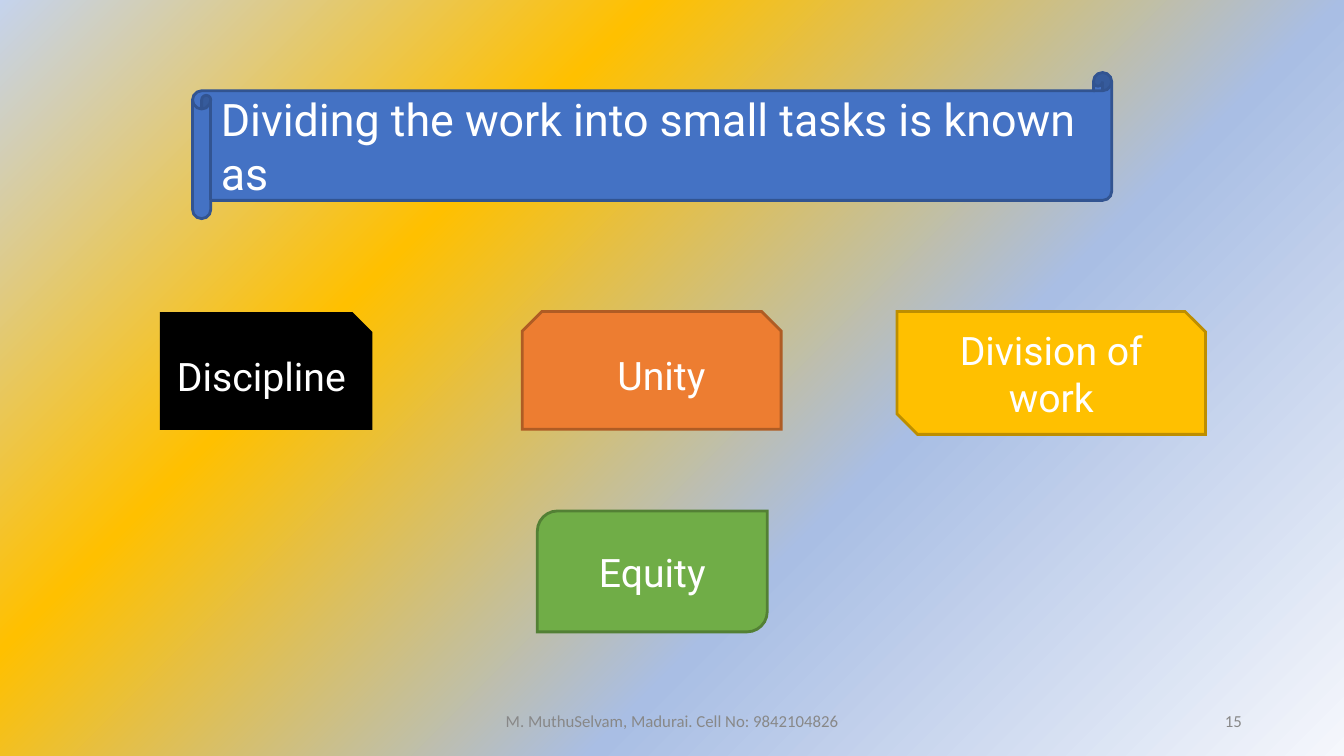
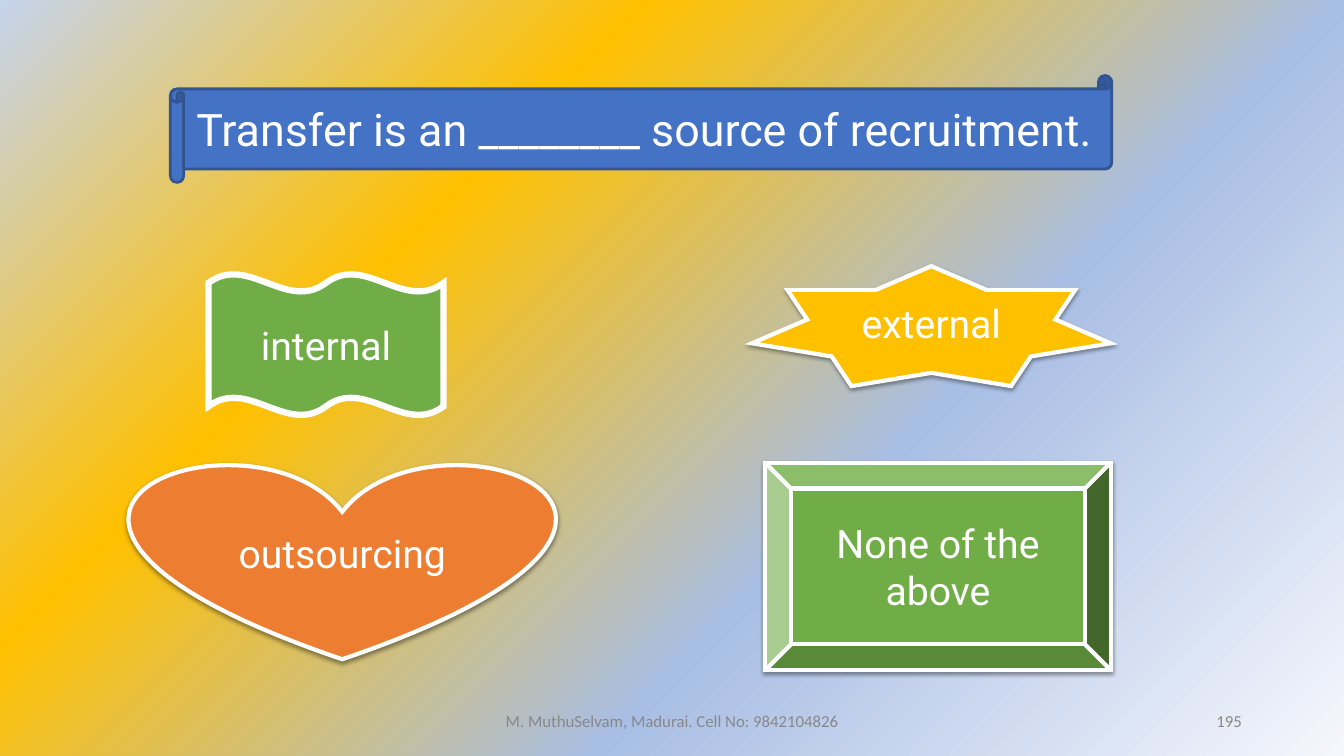
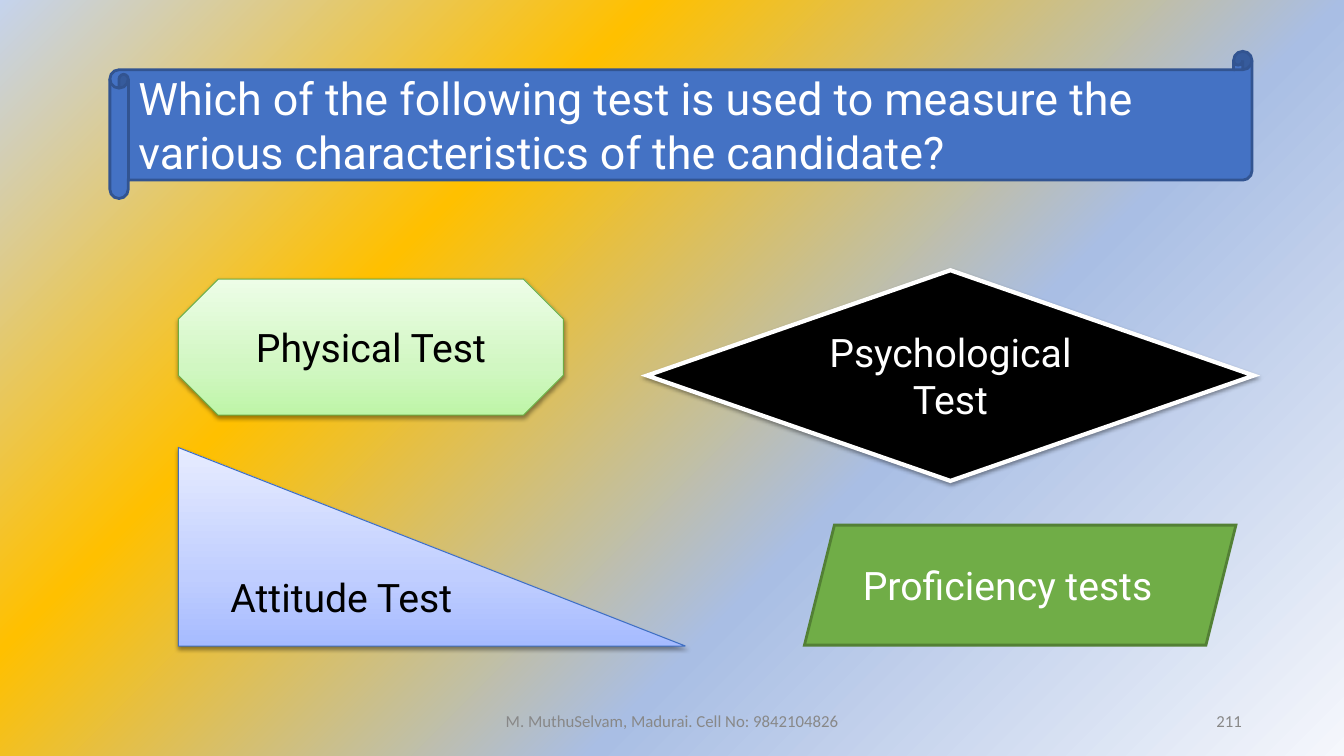
import lxml.etree
import pptx
import pptx.dml.color
import pptx.enum.shapes
import pptx.enum.text
import pptx.oxml.ns
import pptx.util

Pt = pptx.util.Pt
RGB = pptx.dml.color.RGBColor
SHAPE = pptx.enum.shapes.MSO_SHAPE
ALIGN = pptx.enum.text.PP_ALIGN
qn = pptx.oxml.ns.qn

WHITE = RGB(0xFF, 0xFF, 0xFF)
BLACK = RGB(0x00, 0x00, 0x00)
GREY = RGB(0x88, 0x88, 0x88)
BLUE = RGB(0x44, 0x72, 0xC4)
DARK_BLUE = RGB(0x32, 0x54, 0x91)
EDGE_BLUE = RGB(0x3F, 0x6F, 0xC3)
ORANGE = RGB(0xED, 0x7D, 0x31)
DARK_ORANGE = RGB(0xAF, 0x5C, 0x24)
AMBER = RGB(0xFF, 0xC0, 0x00)
DARK_AMBER = RGB(0xBD, 0x8E, 0x00)
GREEN = RGB(0x70, 0xAD, 0x47)
DARK_GREEN = RGB(0x53, 0x80, 0x35)
EDGE_GREEN = RGB(0x6D, 0xAC, 0x43)
PALE_GREENS = [(0, RGB(0xBE, 0xF5, 0xA7)), (35, RGB(0xD1, 0xF7, 0xC2)), (100, RGB(0xED, 0xFD, 0xE7))]
PALE_BLUES = [(0, RGB(0xA6, 0xBB, 0xFF)), (35, RGB(0xC0, 0xCE, 0xFF)), (100, RGB(0xE7, 0xEC, 0xFF))]
BACKGROUND = [(0, RGB(0xF5, 0xF7, 0xFC)), (36, RGB(0xA9, 0xBE, 0xE4)), (69, AMBER), (100, RGB(0xC5, 0xD3, 0xED))]

FOOTER = "M. MuthuSelvam, Madurai. Cell No: 9842104826"
FOOTER_AT = (318.2, 500.4, 324, 28.8)
NUMBER_AT = (678.2, 500.4, 216, 28.8)
INSET = 7.2

SLIDES = [
    dict(
        number="15",
        question="Dividing the work into small tasks is known as",
        at=(137.5, 51.8, 656.6, 104.4),
        answers=[
            dict(text="Discipline", kind=SHAPE.SNIP_1_RECTANGLE, at=(115.2, 223.9, 149.8, 82.1),
                 fill=BLACK, line=BLACK),
            dict(text="Unity", kind=SHAPE.SNIP_2_SAME_RECTANGLE, at=(373, 222.5, 185, 84.2),
                 fill=ORANGE, line=DARK_ORANGE, left_inset=21),
            dict(text="Division of work", kind=SHAPE.SNIP_2_DIAG_RECTANGLE, at=(640.8, 222.5, 220.3, 87.8),
                 fill=AMBER, line=DARK_AMBER),
            dict(text="Equity", kind=SHAPE.ROUND_2_DIAG_RECTANGLE, at=(383.8, 365, 164.2, 86.4),
                 fill=GREEN, line=DARK_GREEN),
        ],
    ),
    dict(
        number="195",
        question="Transfer is an ________ source of recruitment.",
        at=(121.7, 54, 672.5, 76.3),
        align=ALIGN.CENTER,
        answers=[
            dict(text="outsourcing", kind=SHAPE.HEART, at=(92.9, 330.5, 303.1, 140.4),
                 fill=ORANGE, line=WHITE, weight=3, shadow=True),
            dict(text="external", kind=SHAPE.STAR_7_POINT, at=(537.1, 190.1, 256.3, 85.7),
                 fill=AMBER, line=WHITE, weight=3, shadow=True),
            dict(text="None of the above", kind=SHAPE.BEVEL, at=(546.5, 330.5, 247, 148.3),
                 fill=GREEN, line=WHITE, weight=3, shadow=True),
            dict(text="internal", kind=SHAPE.DOUBLE_WAVE, at=(149, 195.8, 167.8, 100.8),
                 fill=GREEN, line=WHITE, weight=4.5),
        ],
    ),
    dict(
        number="211",
        question="Which of the following test is used to measure the various characteristics of the candidate?",
        at=(78.5, 36.7, 815.8, 105.1),
        answers=[
            dict(text="Physical Test", kind=SHAPE.OCTAGON, at=(127.4, 199.4, 275, 97.2),
                 fill=PALE_GREENS, line=EDGE_GREEN, weight=0.75, shadow=True, color=BLACK),
            dict(text="Psychological Test", kind=SHAPE.DIAMOND, at=(462.2, 193, 433.4, 150.5),
                 fill=BLACK, line=WHITE, weight=3, shadow=True),
            dict(text="Attitude Test", kind=SHAPE.RIGHT_TRIANGLE, at=(127.4, 319.7, 362.2, 141.8),
                 fill=PALE_BLUES, line=EDGE_BLUE, weight=0.75, shadow=True, color=BLACK, align=ALIGN.LEFT),
            dict(text="Proficiency tests", kind=SHAPE.PARALLELOGRAM, at=(574.6, 375.1, 308.2, 85.7),
                 fill=GREEN, line=DARK_GREEN, align=ALIGN.LEFT),
        ],
    ),
]


def add_node(parent, tag, **attributes):
    return lxml.etree.SubElement(parent, qn(tag), {name: str(value) for name, value in attributes.items()})


def set_gradient(fill, owner, stops):
    fill.gradient()
    gradient = next(owner.iter(qn("a:gradFill")))
    for child in list(gradient):
        gradient.remove(child)
    stop_list = add_node(gradient, "a:gsLst")
    for position, color in stops:
        add_node(add_node(stop_list, "a:gs", pos=position * 1000), "a:srgbClr", val=color)
    return gradient


def paint_background(master):
    gradient = set_gradient(master.background.fill, master.element, BACKGROUND)
    add_node(add_node(gradient, "a:path", path="circle"), "a:fillToRect", l=100000, t=100000)
    add_node(gradient, "a:tileRect", r=-100000, b=-100000)


def add_shadow(shape):
    effects = shape.element.spPr.find(qn("a:effectLst"))
    outer = add_node(effects, "a:outerShdw", blurRad=Pt(3.15), dist=Pt(1.57), dir=5400000, rotWithShape=0)
    add_node(add_node(outer, "a:srgbClr", val=BLACK), "a:alpha", val=38000)


def write(box, text, size, color, font="Roboto", align=ALIGN.CENTER, left_inset=INSET, vertical_inset=3.6):
    frame = box.text_frame
    frame.word_wrap = True
    frame.auto_size = pptx.enum.text.MSO_AUTO_SIZE.NONE
    frame.vertical_anchor = pptx.enum.text.MSO_ANCHOR.MIDDLE
    frame.margin_left, frame.margin_right = Pt(left_inset), Pt(INSET)
    frame.margin_top = frame.margin_bottom = Pt(vertical_inset)
    para = frame.paragraphs[0]
    para.alignment = align
    span = para.add_run()
    span.text = text
    span.font.size = Pt(size)
    span.font.name = font
    span.font.color.rgb = color


def add_figure(page, kind, at, fill, line, weight=2, shadow=False):
    shape = page.shapes.add_shape(kind, *map(Pt, at))
    shape.shadow.inherit = False
    if isinstance(fill, list):
        add_node(set_gradient(shape.fill, shape.element, fill), "a:lin", ang=16200000, scaled=1)
    else:
        shape.fill.solid()
        shape.fill.fore_color.rgb = fill
    shape.line.color.rgb = line
    shape.line.width = Pt(weight)
    add_node(shape.element.spPr.find(qn("a:ln")), "a:miter", lim=800000)
    if shadow:
        add_shadow(shape)
    return shape


def add_answer(page, text, color=WHITE, align=ALIGN.CENTER, left_inset=INSET, **look):
    write(add_figure(page, **look), text, 28, color, align=align, left_inset=left_inset)


def add_question(page, text, at, align):
    add_figure(page, SHAPE.HORIZONTAL_SCROLL, at, BLUE, DARK_BLUE)
    left, top, width, height = at
    roll = height / 8
    title = page.shapes.title
    title.left, title.top = Pt(left + roll), Pt(top + roll)
    title.width, title.height = Pt(width - 1.5 * roll), Pt(height - 2 * roll)
    write(title, text, 32, WHITE, align=align, vertical_inset=0)
    page.shapes.element.append(title.element)


def add_footer(page, text, at, align):
    write(page.shapes.add_textbox(*map(Pt, at)), text, 12, GREY, "Calibri", align)


def main():
    deck = pptx.Presentation()
    deck.slide_width, deck.slide_height = Pt(960), Pt(540)
    paint_background(deck.slide_master)
    for content in SLIDES:
        page = deck.slides.add_slide(deck.slide_layouts.get_by_name("Title Only"))
        add_question(page, content["question"], content["at"], content.get("align", ALIGN.LEFT))
        for answer in content["answers"]:
            add_answer(page, **answer)
        add_footer(page, FOOTER, FOOTER_AT, ALIGN.CENTER)
        add_footer(page, content["number"], NUMBER_AT, ALIGN.RIGHT)
    deck.save("out.pptx")


if __name__ == "__main__":
    main()
